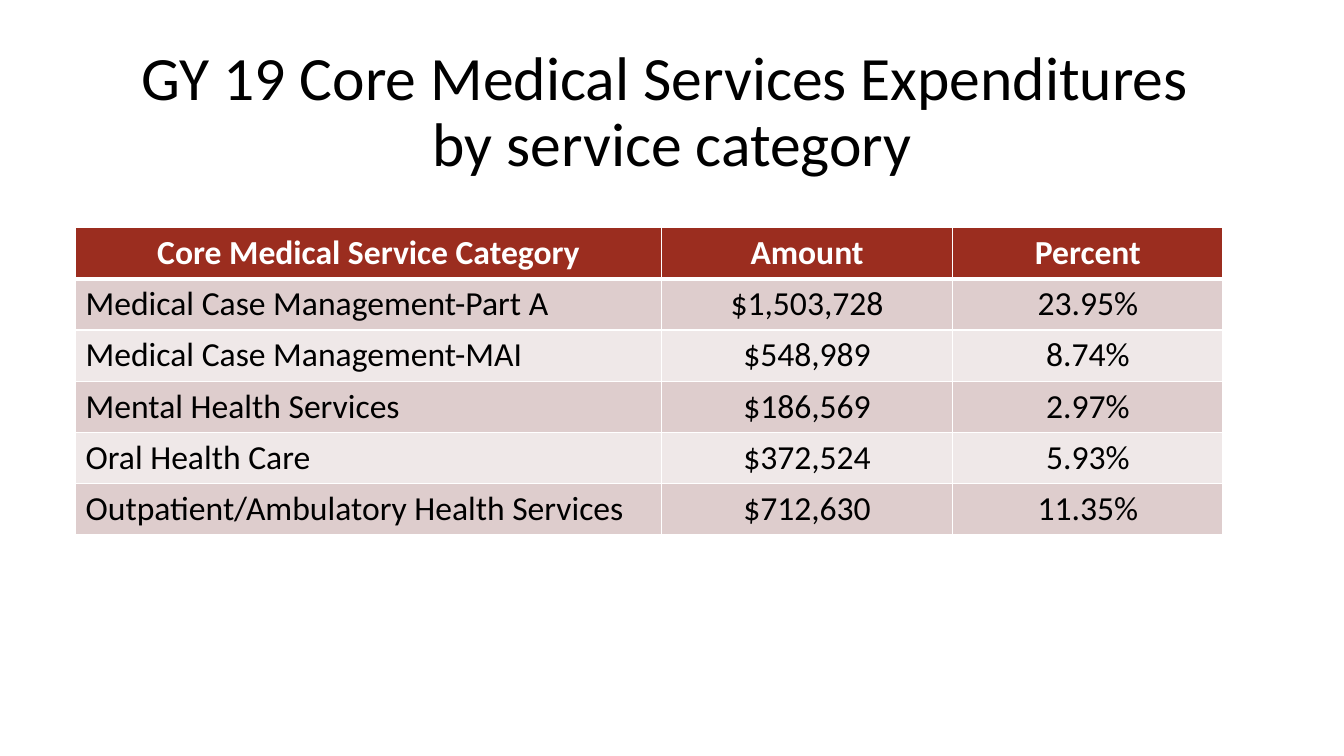
from lxml import etree
from pptx import Presentation
from pptx.dml.color import RGBColor
from pptx.enum.text import MSO_ANCHOR, PP_ALIGN
from pptx.oxml.ns import qn
from pptx.util import Inches, Pt

LEFT, CENTER = PP_ALIGN.LEFT, PP_ALIGN.CENTER
MIDDLE = MSO_ANCHOR.MIDDLE

FONT = "Calibri"
COLORS = {
    "text": "000000",
    "header": "9B2D1F",
    "odd_row": "DECDCD",
    "even_row": "EFE8E8",
    "white": "FFFFFF",
}
TITLE = "GY 19 Core Medical Services Expenditures \vby service category"
EXPENDITURES = [
    ("Core Medical Service Category", "Amount", "Percent"),
    ("Medical Case Management-Part A", "$1,503,728", "23.95%"),
    ("Medical Case Management-MAI", "$548,989", "8.74%"),
    ("Mental Health Services", "$186,569", "2.97%"),
    ("Oral Health Care", "$372,524", "5.93%"),
    ("Outpatient/Ambulatory Health Services", "$712,630", "11.35%"),
]
COLUMN_WIDTHS = (5.81, 2.89, 2.68)
ROW_HEIGHT = 0.5


def format_text(paragraph, size, color, align, bold=False):
    paragraph.alignment = align
    for run in paragraph.runs:
        run.font.name = FONT
        run.font.size = Pt(size)
        run.font.bold = bold
        run.font.color.rgb = RGBColor.from_string(COLORS[color])


def set_borders(cell, bottom_width):
    properties = cell._tc.get_or_add_tcPr()
    for side, width in (("L", 1), ("R", 1), ("T", 1), ("B", bottom_width)):
        border = etree.SubElement(properties, qn(f"a:ln{side}"), w=str(Pt(width)))
        fill = etree.SubElement(border, qn("a:solidFill"))
        etree.SubElement(fill, qn("a:srgbClr"), val=COLORS["white"])


def add_title(slide):
    title = slide.shapes.title
    title.left, title.top = Inches(0.92), Inches(0.4)
    title.width, title.height = Inches(11.5), Inches(1.45)
    title.text_frame.text = TITLE
    title.text_frame.word_wrap = True
    title.text_frame.vertical_anchor = MIDDLE
    heading = title.text_frame.paragraphs[0]
    heading.line_spacing = 0.9
    format_text(heading, 44, "text", CENTER)


def fill_cell(cell, value, row, column):
    is_header = row == 0
    band = "header" if is_header else "odd_row" if row % 2 else "even_row"
    set_borders(cell, 3 if is_header else 1)
    cell.fill.solid()
    cell.fill.fore_color.rgb = RGBColor.from_string(COLORS[band])
    cell.text_frame.text = value
    format_text(
        cell.text_frame.paragraphs[0],
        24,
        "white" if is_header else "text",
        CENTER if is_header or column else LEFT,
        bold=is_header,
    )


def add_expenditure_table(slide):
    table = slide.shapes.add_table(
        len(EXPENDITURES), len(COLUMN_WIDTHS),
        Inches(0.75), Inches(2.26),
        Inches(sum(COLUMN_WIDTHS)), Inches(ROW_HEIGHT * len(EXPENDITURES)),
    ).table
    for column, width in zip(table.columns, COLUMN_WIDTHS):
        column.width = Inches(width)
    for row, values in enumerate(EXPENDITURES):
        for column, value in enumerate(values):
            fill_cell(table.cell(row, column), value, row, column)


def main():
    presentation = Presentation()
    presentation.slide_width = Inches(13.33)
    presentation.slide_height = Inches(7.5)
    slide = presentation.slides.add_slide(presentation.slide_layouts[5])
    add_title(slide)
    add_expenditure_table(slide)
    presentation.save("out.pptx")


if __name__ == "__main__":
    main()
